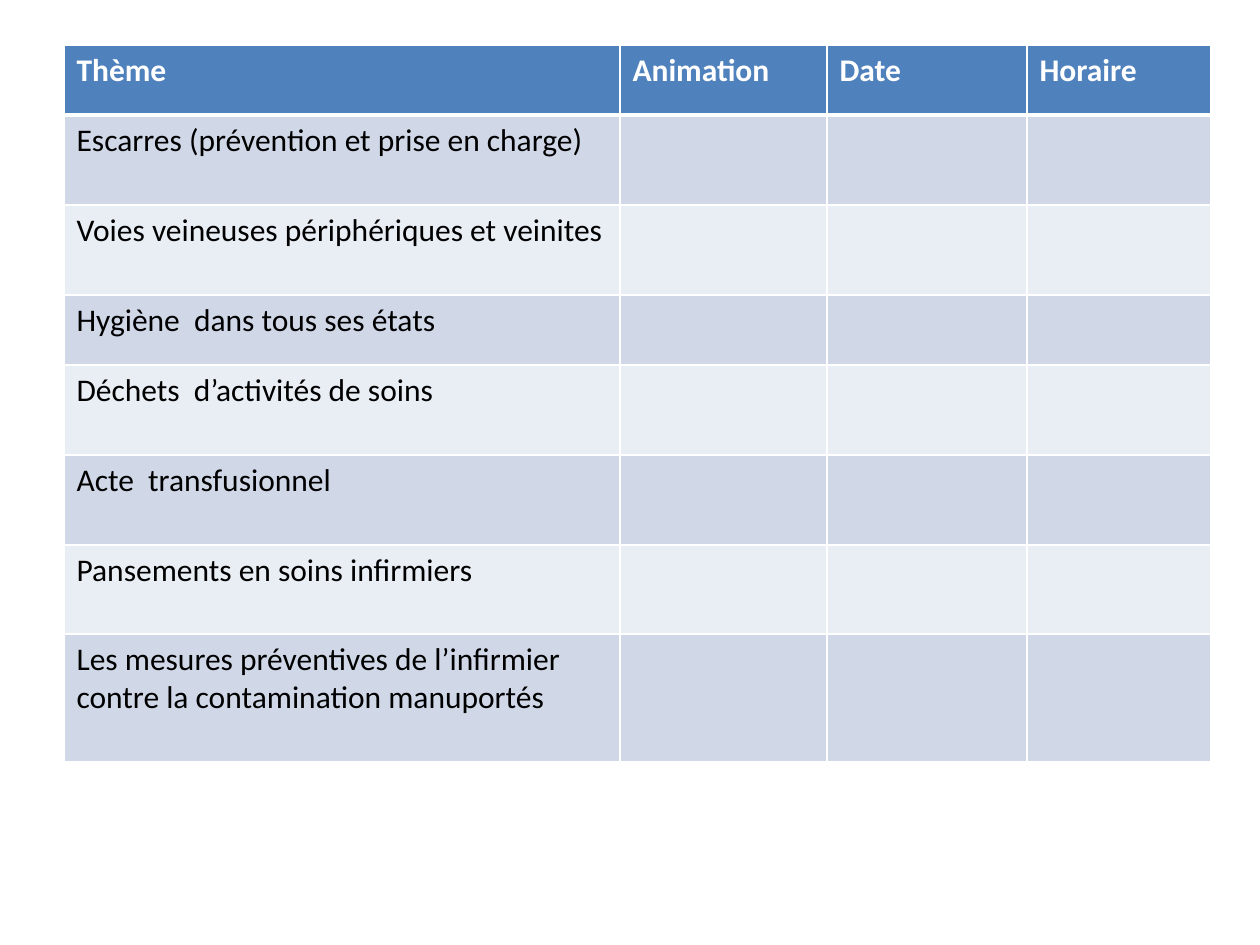
from dataclasses import dataclass

from lxml.etree import SubElement
from pptx import Presentation
from pptx.dml.color import RGBColor as Color
from pptx.oxml.ns import qn
from pptx.table import _Cell as Cell
from pptx.util import Emu, Pt

PX = 914400 // 126


@dataclass(frozen=True)
class Theme:
    font: str = "Calibri"
    size: int = 18
    header: str = "4F81BD"
    bands: tuple[str, str] = ("D0D8E8", "E9EDF4")
    light: str = "FFFFFF"
    dark: str = "000000"
    rule: int = 1
    header_rule: int = 3


@dataclass(frozen=True)
class Row:
    height: int
    texts: tuple[str, ...]


THEME = Theme()
COLUMN_WIDTHS = (556, 207, 200, 184)
HEADER = Row(70, ("Thème", "Animation", "Date", "Horaire"))
TOPICS = (
    Row(90, ("Escarres (prévention et prise en charge)",)),
    Row(90, ("Voies veineuses périphériques et veinites",)),
    Row(70, ("Hygiène  dans tous ses états",)),
    Row(90, ("Déchets  d’activités de soins",)),
    Row(90, ("Acte  transfusionnel",)),
    Row(89, ("Pansements en soins infirmiers",)),
    Row(128, ("Les mesures préventives de l’infirmier contre la contamination manuportés",)),
)


def px(length: int) -> Emu:
    return Emu(length * PX)


def draw_borders(cell: Cell, top: int, bottom: int) -> None:
    """Rule all four sides; top and bottom widths are in points."""
    properties = cell._tc.get_or_add_tcPr()
    widths = {"L": THEME.rule, "R": THEME.rule, "T": top, "B": bottom}
    for side, width in widths.items():
        line = SubElement(properties, qn(f"a:ln{side}"), w=str(Pt(width)))
        fill = SubElement(line, qn("a:solidFill"))
        SubElement(fill, qn("a:srgbClr"), val=THEME.light)


def write_text(cell: Cell, text: str, is_header: bool) -> None:
    span = cell.text_frame.paragraphs[0].add_run()
    span.text = text
    formats = {"name": THEME.font, "size": Pt(THEME.size), "bold": is_header}
    for name, value in formats.items():
        setattr(span.font, name, value)
    span.font.color.rgb = Color.from_string(THEME.light if is_header else THEME.dark)


def format_cell(cell: Cell, row_index: int) -> None:
    is_header = row_index == 0
    draw_borders(
        cell,
        top=THEME.header_rule if row_index == 1 else THEME.rule,
        bottom=THEME.header_rule if is_header else THEME.rule,
    )
    fill = THEME.header if is_header else THEME.bands[(row_index - 1) % 2]
    cell.fill.solid()
    cell.fill.fore_color.rgb = Color.from_string(fill)


def main() -> None:
    deck = Presentation()
    deck.slide_width, deck.slide_height = px(1260), px(945)
    page = deck.slides.add_slide(deck.slide_layouts[6])

    rows = (HEADER, *TOPICS)
    table = page.shapes.add_table(
        len(rows), len(COLUMN_WIDTHS), px(64), px(45),
        px(sum(COLUMN_WIDTHS)), px(sum(row.height for row in rows)),
    ).table
    for column, width in zip(table.columns, COLUMN_WIDTHS):
        column.width = px(width)
    for row_index, row in enumerate(rows):
        table.rows[row_index].height = px(row.height)
        cells = table.rows[row_index].cells
        for cell in cells:
            format_cell(cell, row_index)
        for cell, text in zip(cells, row.texts):
            write_text(cell, text, is_header=row_index == 0)

    deck.save("out.pptx")


if __name__ == "__main__":
    main()
